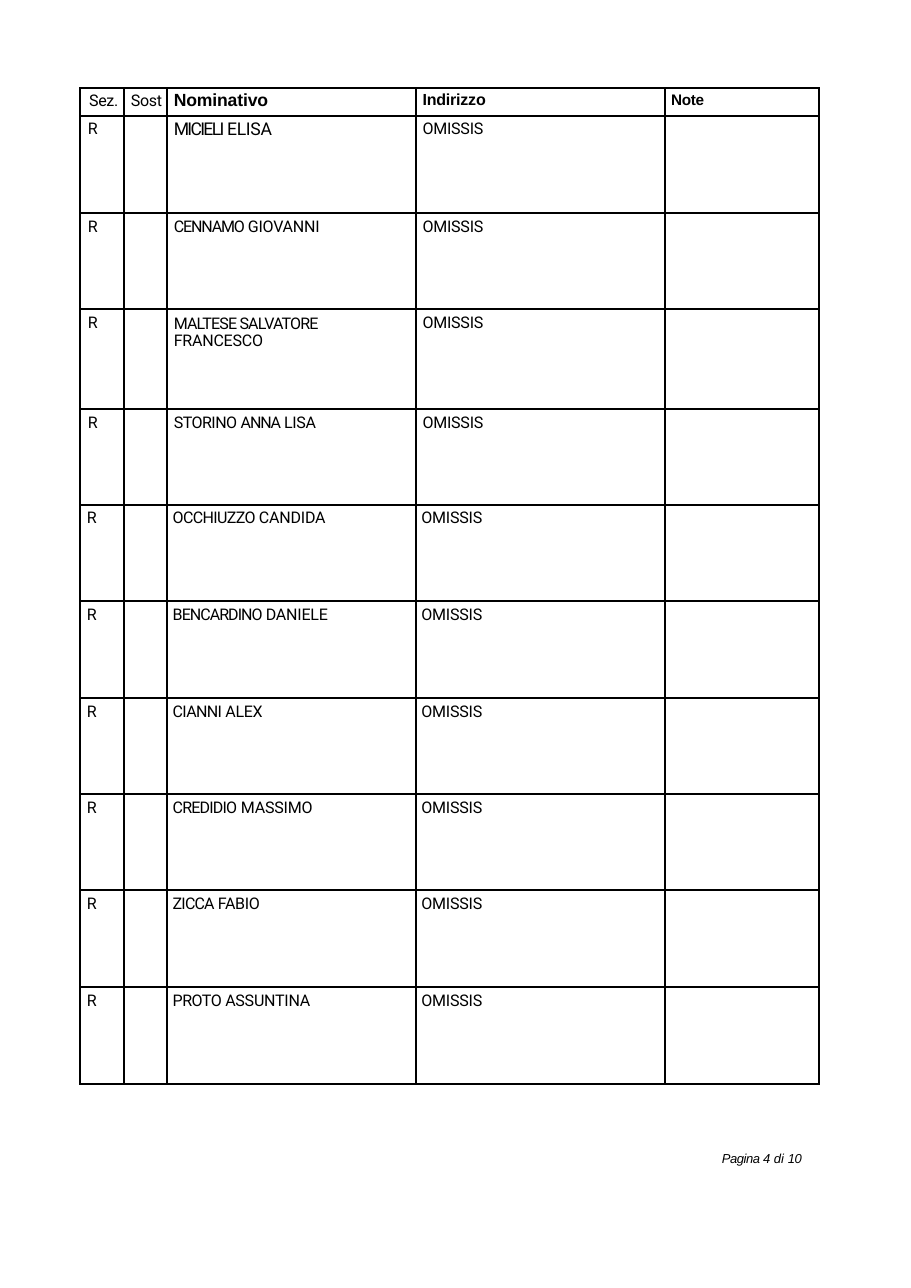
import lxml.etree
import pptx
import pptx.dml.color
import pptx.enum.text
import pptx.oxml.ns
import pptx.util

WIDE, HIGH = 596, 842.5
INK = "000000"
COLS = [0.4, 0.39, 2.26, 2.26, 1.4]
ROWS = [0.25, 0.89, 0.87, 0.91, 0.87, 0.88, 0.88, 0.87, 0.88, 0.88, 0.88]
HEADS = [
    ("Sez.", "Roboto", 10.5, -0.2, 0.08, 0.03),
    ("Sost", "Roboto", 10.5, -0.2, 0.06, 0.03),
    ("Nominativo", "Arial", 11.5, -0.1, 0.06, 0.02),
    ("Indirizzo", "Arial", 10.5, -0.1, 0.06, 0.03),
    ("Note", "Arial", 10, -0.2, 0.06, 0.03),
]
NAMES = [
    [("MICIELI ", -1.1), ("ELISA", -0.2)],
    [("CENNAMO ", -0.7), ("GIOVANNI", -0.1)],
    [("MALTESE SALVATORE ", -0.5), ("FRANCESCO", -0.1)],
    [("STORINO ", -0.3), ("ANNA ", -0.7), ("LISA", -0.2)],
    [("OCCHIUZZO ", -0.4), ("CANDIDA", -0.1)],
    [("BENCARDINO ", -0.6), ("DANIELE", -0.1)],
    [("CIANNI ", -0.4), ("ALEX", -0.2)],
    [("CREDIDIO", -0.5), (" MASSIMO", -0.1)],
    [("ZICCA ", -0.5), ("FABIO", -0.2)],
    [("PROTO ", -0.3), ("ASSUNTINA", -0.1)],
]


def inch(size):
    """Turn inches into a length."""
    return pptx.util.Inches(size)


def tint(code):
    """Turn a hex string into a colour."""
    return pptx.dml.color.RGBColor.from_string(code)


def write(para, parts, face, size, bold=False, slant=False):
    """Add runs of (text, letter spacing) to a paragraph."""
    for text, gap in parts:
        run = para.add_run()
        run.text = text
        font = run.font
        font.name, font.size = face, pptx.util.Pt(size)
        font.bold, font.italic = bold, slant
        font.color.rgb = tint(INK)
        run._r.get_or_add_rPr().set("spc", str(round(gap * 100)))


def frame(cell):
    """Clear a cell's fill and margins and draw its four borders."""
    cell.fill.background()
    cell.margin_left = cell.margin_right = 0
    cell.margin_top = cell.margin_bottom = 0
    props = cell._tc.get_or_add_tcPr()
    name = pptx.oxml.ns.qn
    for spot, side in enumerate("LRTB"):
        line = lxml.etree.Element(name("a:ln" + side), w=str(pptx.util.Pt(1.5)))
        fill = lxml.etree.SubElement(line, name("a:solidFill"))
        lxml.etree.SubElement(fill, name("a:srgbClr"), val=INK)
        props.insert(spot, line)


def fill_cell(cell, parts, face, size, left, top, bold=False):
    """Write one cell with its left and top margins."""
    cell.margin_left, cell.margin_top = inch(left), inch(top)
    write(cell.text_frame.paragraphs[0], parts, face, size, bold)


def roster(slide, left, top, wide, high):
    """Place the list of names in a ruled table."""
    shape = slide.shapes.add_table(
        len(ROWS), len(COLS), inch(left), inch(top), inch(wide), inch(high))
    table = shape.table
    table.first_row = table.horz_banding = False
    for col, share in zip(table.columns, COLS):
        col.width = inch(wide * share / sum(COLS))
    for row, share in zip(table.rows, ROWS):
        row.height = inch(high * share / sum(ROWS))
    for cell in table.iter_cells():
        frame(cell)
    for col, (text, face, size, gap, pad, drop) in enumerate(HEADS):
        fill_cell(table.cell(0, col), [(text, gap)], face, size, pad, drop,
                  face == "Arial")
    for row, parts in enumerate(NAMES, 1):
        pad = 0.06 if row < 5 else 0.05
        size = 11.5 if row == 1 else 10.5
        drop = 0.03 if row == 1 else 0.04
        fill_cell(table.cell(row, 0), [("R", -0.5)], "Roboto", 10.5, pad + 0.01, 0.04)
        fill_cell(table.cell(row, 2), parts, "Roboto", size, pad, drop)
        fill_cell(table.cell(row, 3), [("OMISSIS", -0.1)], "Roboto", 10.5, pad, 0.04)
    long = table.cell(3, 2)
    long.margin_top, long.margin_right = inch(0.06), inch(0.5)
    long.text_frame.paragraphs[0].line_spacing = pptx.util.Pt(11.5)


def footer(slide, left, top, wide, high):
    """Place the page number."""
    box = slide.shapes.add_textbox(inch(left), inch(top), inch(wide), inch(high))
    text = box.text_frame
    text.word_wrap = False
    text.margin_left = text.margin_top = inch(0.01)
    text.margin_right = text.margin_bottom = 0
    text.vertical_anchor = pptx.enum.text.MSO_ANCHOR.TOP
    write(text.paragraphs[0], [("Pagina ", -0.3), ("4 di ", 0), ("10", -0.2)],
          "Arial", 8.5, slant=True)


def main():
    """Build the page and save it."""
    deck = pptx.Presentation()
    deck.slide_width, deck.slide_height = pptx.util.Pt(WIDE), pptx.util.Pt(HIGH)
    slide = deck.slides.add_slide(deck.slide_layouts[6])
    roster(slide, 0.73, 0.8, sum(COLS), 9.05)
    footer(slide, 6.55, 10.44, 0.76, 0.17)
    deck.save("out.pptx")


if __name__ == "__main__":
    main()
